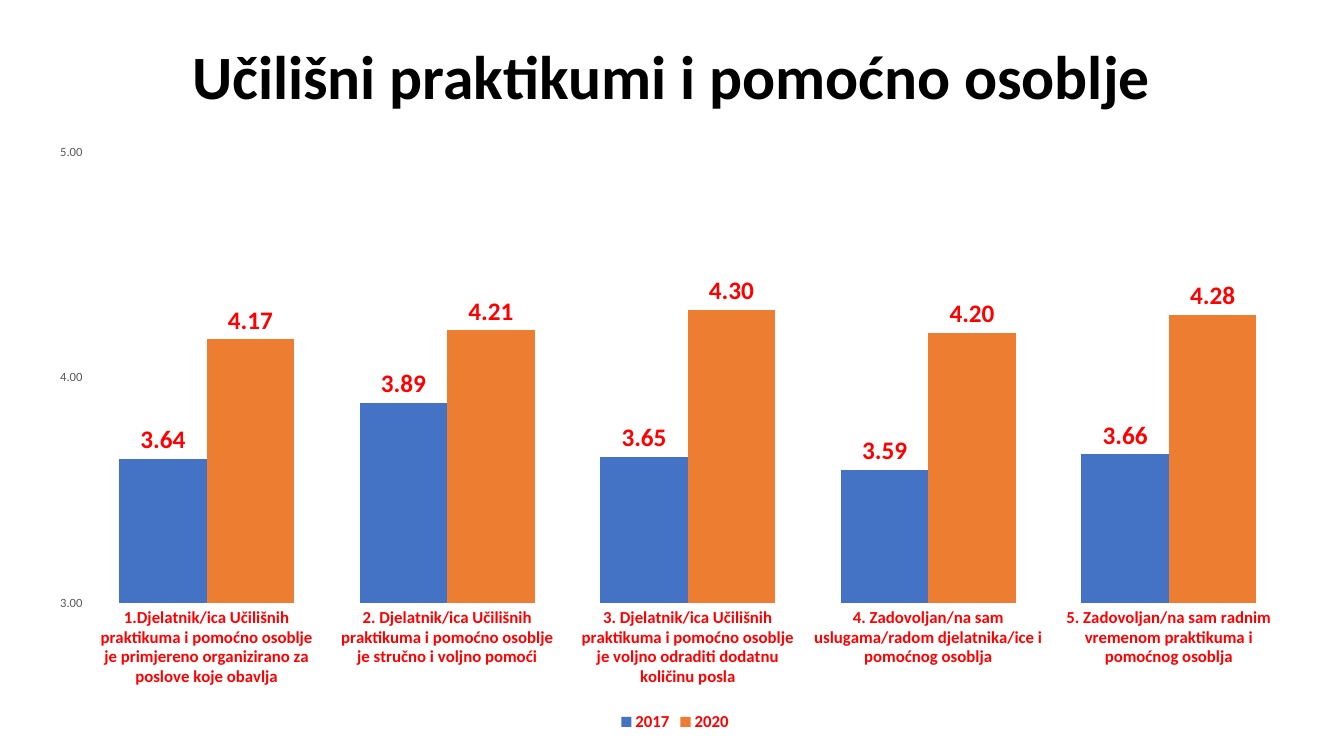
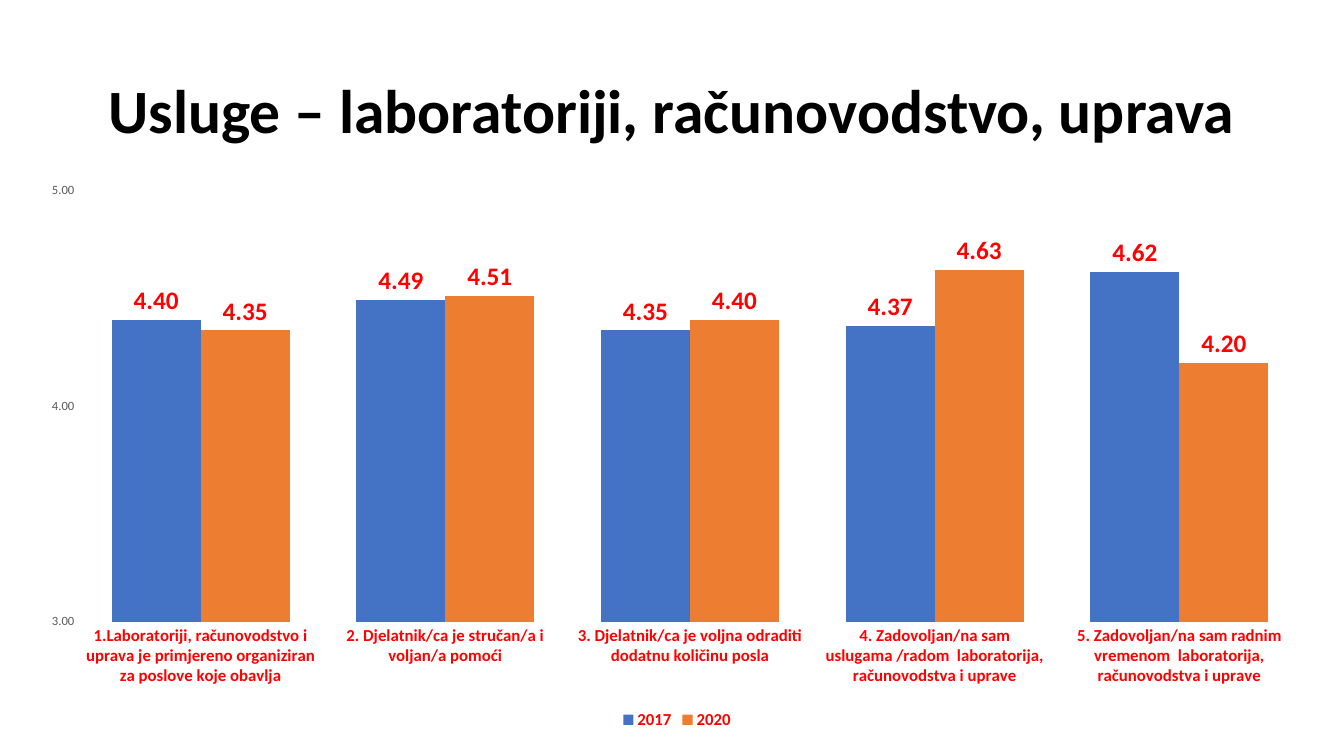
"""Builds two survey slides comparing 2017 and 2020 ratings in column charts."""
from dataclasses import dataclass

from lxml.etree import SubElement
from pptx import Presentation
from pptx.chart.data import CategoryChartData
from pptx.dml.color import RGBColor
from pptx.enum.chart import XL_CHART_TYPE as ChartType
from pptx.enum.chart import XL_LABEL_POSITION as LabelPosition
from pptx.enum.chart import XL_LEGEND_POSITION as LegendPosition
from pptx.enum.chart import XL_TICK_MARK as TickMark
from pptx.enum.text import MSO_ANCHOR, PP_ALIGN
from pptx.oxml.ns import qn
from pptx.util import Inches, Pt


@dataclass(frozen=True)
class Theme:
    font: str = "Calibri"
    ink: str = "000000"
    accent: str = "FF0000"
    muted: str = "595959"
    columns: tuple = ("4472C4", "ED7D31")
    title_size: int = 44
    value_size: int = 18
    label_size: int = 12
    base_size: int = 10
    scale_size: int = 9


THEME = Theme()
SLIDE_SIZE = (13.33, 7.5)
TITLE_WIDTH, TITLE_HEIGHT = 11.5, 1.45
RATING_FORMAT = "0.00"
YEARS = ("2017", "2020")

SURVEYS = [
    {
        "title": "Učilišni praktikumi i pomoćno osoblje",
        "title_top": 0.06,
        "chart_box": (0.35, 1.33, 12.69, 5.97),
        "plot_height": 0.75,
        "ratings": [
            ("1.Djelatnik/ica Učilišnih praktikuma i pomoćno osoblje je "
             "primjereno organizirano za poslove koje obavlja", 3.64, 4.17),
            ("2. Djelatnik/ica Učilišnih praktikuma i pomoćno osoblje je "
             "stručno i voljno pomoći", 3.89, 4.21),
            ("3. Djelatnik/ica Učilišnih praktikuma i pomoćno osoblje je "
             "voljno odraditi dodatnu količinu posla", 3.65, 4.30),
            ("4. Zadovoljan/na sam uslugama/radom djelatnika/ice i "
             "pomoćnog osoblja", 3.59, 4.20),
            ("5. Zadovoljan/na sam radnim vremenom praktikuma i "
             "pomoćnog osoblja", 3.66, 4.28),
        ],
    },
    {
        "title": "Usluge – laboratoriji, računovodstvo, uprava",
        "title_top": 0.4,
        "chart_box": (0.26, 1.72, 12.91, 5.56),
        "plot_height": 0.77,
        "ratings": [
            ("1.Laboratoriji, računovodstvo i uprava je primjereno "
             "organiziran za poslove koje obavlja", 4.40, 4.35),
            ("2. Djelatnik/ca je stručan/a i voljan/a pomoći", 4.49, 4.51),
            ("3. Djelatnik/ca je voljna odraditi dodatnu količinu posla",
             4.35, 4.40),
            ("4. Zadovoljan/na sam uslugama /radom  laboratorija, "
             "računovodstva i uprave", 4.37, 4.63),
            ("5. Zadovoljan/na sam radnim vremenom  laboratorija, "
             "računovodstva i uprave", 4.62, 4.20),
        ],
    },
]


def style_font(font, size, color, bold=False):
    font.name = THEME.font
    font.size = Pt(size)
    font.bold = bold
    font.color.rgb = RGBColor.from_string(color)


def add_title(slide, title, top):
    left = (SLIDE_SIZE[0] - TITLE_WIDTH) / 2
    box = slide.shapes.add_textbox(
        *map(Inches, (left, top, TITLE_WIDTH, TITLE_HEIGHT)))
    frame = box.text_frame
    frame.word_wrap = True
    frame.vertical_anchor = MSO_ANCHOR.MIDDLE
    heading = frame.paragraphs[0]
    heading.alignment = PP_ALIGN.CENTER
    heading.line_spacing = 0.9
    run = heading.add_run()
    run.text = title
    style_font(run.font, THEME.title_size, THEME.ink, bold=True)


def place_plot(chart, **shares):
    plot_area = chart._chartSpace.chart.plotArea
    for old_layout in plot_area.findall(qn("c:layout")):
        plot_area.remove(old_layout)
    layout = SubElement(plot_area, qn("c:layout"))
    plot_area.insert(0, layout)
    manual = SubElement(layout, qn("c:manualLayout"))
    settings = {"layoutTarget": "inner", "xMode": "edge", "yMode": "edge", **shares}
    for tag, value in settings.items():
        SubElement(manual, qn(f"c:{tag}")).set("val", str(value))


def style_axis(axis, size, color, bold=False):
    axis.has_major_gridlines = False
    axis.major_tick_mark = axis.minor_tick_mark = TickMark.NONE
    axis.format.line.fill.background()
    style_font(axis.tick_labels.font, size, color, bold)


def add_ratings_chart(slide, ratings, box, plot_height):
    statements, *yearly_ratings = zip(*ratings)
    data = CategoryChartData(number_format=RATING_FORMAT)
    data.categories = statements
    for year, values in zip(YEARS, yearly_ratings):
        data.add_series(year, values)
    chart = slide.shapes.add_chart(
        ChartType.COLUMN_CLUSTERED, *map(Inches, box), data).chart
    style_font(chart.font, THEME.base_size, THEME.ink)
    chart.has_title = False
    place_plot(chart, x=0.04, y=0.03, w=0.94, h=plot_height)

    style_axis(chart.category_axis, THEME.label_size, THEME.accent, bold=True)
    scale = chart.value_axis
    style_axis(scale, THEME.scale_size, THEME.muted)
    scale.minimum_scale, scale.maximum_scale, scale.major_unit = 3, 5, 1
    scale.tick_labels.number_format = RATING_FORMAT
    scale.tick_labels.number_format_is_linked = False

    chart.has_legend = True
    chart.legend.position = LegendPosition.BOTTOM
    chart.legend.include_in_layout = False
    style_font(chart.legend.font, THEME.label_size, THEME.accent, bold=True)

    plot = chart.plots[0]
    plot.gap_width, plot.overlap, plot.vary_by_categories = 75, 0, False
    for year_columns, color in zip(plot.series, THEME.columns):
        year_columns.format.fill.solid()
        year_columns.format.fill.fore_color.rgb = RGBColor.from_string(color)
        labels = year_columns.data_labels
        labels.show_value = True
        labels.position = LabelPosition.OUTSIDE_END
        labels.number_format = RATING_FORMAT
        labels.number_format_is_linked = False
        style_font(labels.font, THEME.value_size, THEME.accent, bold=True)


def main():
    deck = Presentation()
    deck.slide_width, deck.slide_height = map(Inches, SLIDE_SIZE)
    for survey in SURVEYS:
        slide = deck.slides.add_slide(deck.slide_layouts[6])
        add_title(slide, survey["title"], survey["title_top"])
        add_ratings_chart(slide, survey["ratings"], survey["chart_box"],
                          survey["plot_height"])
    deck.save("out.pptx")


if __name__ == "__main__":
    main()
